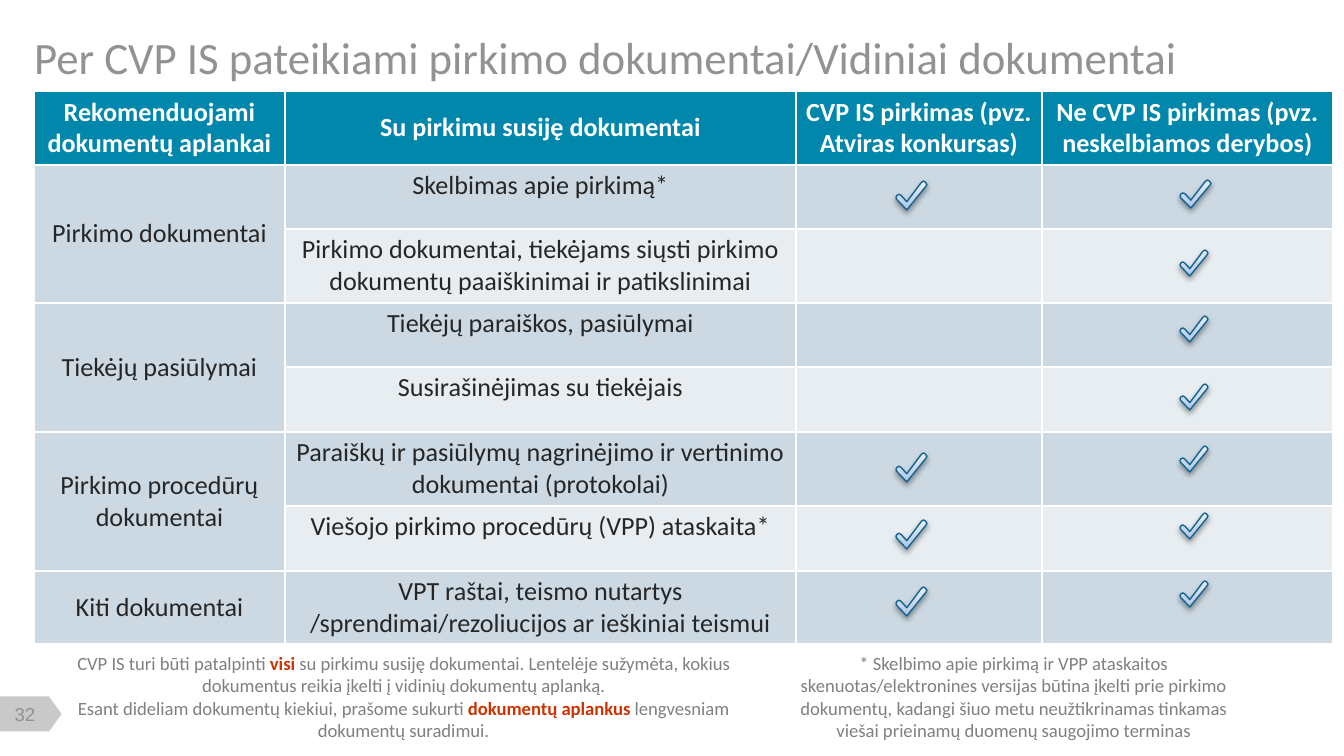
from copy import deepcopy

from lxml.etree import SubElement
from pptx import Presentation
from pptx.dml.color import RGBColor
from pptx.enum.shapes import MSO_SHAPE
from pptx.enum.text import MSO_ANCHOR as Anchor, MSO_AUTO_SIZE as AutoSize, PP_ALIGN as Align
from pptx.oxml.ns import qn
from pptx.util import Emu, Pt

WHITE = RGBColor(0xFF, 0xFF, 0xFF)
TITLE_GRAY = RGBColor(0x92, 0x92, 0x92)
NOTE_GRAY = RGBColor(0x80, 0x80, 0x80)
TAG_GRAY = RGBColor(0xC9, 0xC9, 0xC9)
INK = RGBColor(0x26, 0x26, 0x26)
RED = RGBColor(0xCC, 0x33, 0x00)
TEAL = RGBColor(0x01, 0x87, 0xAC)
BAND_DARK = RGBColor(0xCC, 0xD9, 0xE3)
BAND_LIGHT = RGBColor(0xE7, 0xED, 0xF1)
CHECK_LINE = RGBColor(0x14, 0x63, 0x90)
CHECK_STOPS = [
    (0, RGBColor(0xA9, 0xC3, 0xE5)),
    (0.35, RGBColor(0xC3, 0xD5, 0xEC)),
    (1, RGBColor(0xE8, 0xEF, 0xF8)),
]
CHECK_OUTLINE = [(95, 4), (89, 0), (82, 5), (35, 72), (17, 50), (10, 46), (3, 50),
                 (0, 57), (2, 63), (35, 100), (97, 18), (100, 12)]

HEADERS = ["Rekomenduojami dokumentų aplankai", "Su pirkimu susiję dokumentai",
           "CVP IS pirkimas (pvz. Atviras konkursas)",
           "Ne CVP IS pirkimas (pvz. neskelbiamos derybos)"]
FOLDERS = [
    ("Pirkimo dokumentai", [
        "Skelbimas apie pirkimą*",
        "Pirkimo dokumentai, tiekėjams siųsti pirkimo dokumentų paaiškinimai ir patikslinimai"]),
    ("Tiekėjų pasiūlymai", [
        "Tiekėjų paraiškos, pasiūlymai",
        "Susirašinėjimas su tiekėjais"]),
    ("Pirkimo procedūrų dokumentai", [
        "Paraiškų ir pasiūlymų nagrinėjimo ir vertinimo dokumentai (protokolai)",
        "Viešojo pirkimo procedūrų (VPP) ataskaita*"]),
    ("Kiti dokumentai", [
        "VPT raštai, teismo nutartys /sprendimai/rezoliucijos ar ieškiniai teismui"]),
]
COLUMN_WIDTHS = [251, 511, 246, 291]
ROW_HEIGHTS = [74, 64, 74, 64, 65, 74, 65, 73]
CVP_CHECK_TOPS = [181, 453, 520, 587]
OTHER_CHECK_TOPS = [250, 316, 384, 446, 513, 581]
FOLDER_NOTE = [
    [("CVP IS turi būti patalpinti ", False), ("visi", True),
     (" su pirkimu susiję dokumentai. Lentelėje sužymėta, kokius dokumentus reikia "
      "įkelti į vidinių dokumentų aplanką.", False)],
    [("Esant dideliam dokumentų kiekiui, prašome sukurti ", False),
     ("dokumentų aplankus ", True), ("lengvesniam dokumentų suradimui.", False)],
]
STORAGE_NOTE = [[(
    "* Skelbimo apie pirkimą ir VPP ataskaitos skenuotas/elektronines versijas būtina "
    "įkelti prie pirkimo dokumentų, kadangi šiuo metu neužtikrinamas tinkamas viešai "
    "prieinamų duomenų saugojimo terminas", False)]]


def px(value):
    return Emu(round(value * 914400 / 134.4))


def add_text(paragraph, text, size=10, color=NOTE_GRAY, bold=False, font="Calibri",
             align=Align.CENTER, after=0):
    paragraph.alignment = align
    paragraph.space_after = Pt(after)
    run = paragraph.add_run()
    run.text = text
    run.font.name = font
    run.font.size = Pt(size)
    run.font.bold = bold
    run.font.color.rgb = color


class SlideBuilder:
    def __init__(self, presentation):
        self.slide = presentation.slides.add_slide(presentation.slide_layouts[5])
        self.shapes = self.slide.shapes

    def title(self, text, *box):
        shape = self.shapes.title
        shape.left, shape.top, shape.width, shape.height = map(px, box)
        frame = shape.text_frame
        frame.auto_size = AutoSize.NONE
        frame.vertical_anchor = Anchor.MIDDLE
        frame.margin_left = 0
        add_text(frame.paragraphs[0], text, size=24, color=TITLE_GRAY, align=Align.LEFT)

    def page_number(self, text):
        tag = self.shapes.add_shape(MSO_SHAPE.FLOWCHART_OFFPAGE_CONNECTOR,
                                    px(13), px(683), px(35), px(62))
        tag.rotation = 270
        tag.shadow.inherit = False
        tag.fill.solid()
        tag.fill.fore_color.rgb = TAG_GRAY
        tag.line.fill.background()
        frame = self.shapes.add_textbox(px(3), px(703), px(44), px(23)).text_frame
        frame.word_wrap = True
        frame.vertical_anchor = Anchor.MIDDLE
        frame.margin_left = frame.margin_right = frame.margin_top = frame.margin_bottom = 0
        add_text(frame.paragraphs[0], text, color=TITLE_GRAY, font="Arial")

    def note(self, paragraphs, *box):
        frame = self.shapes.add_textbox(*map(px, box)).text_frame
        frame.word_wrap = True
        for index, runs in enumerate(paragraphs):
            paragraph = frame.add_paragraph() if index else frame.paragraphs[0]
            for text, strong in runs:
                add_text(paragraph, text, bold=strong, color=RED if strong else NOTE_GRAY)

    def cell(self, cell, text, anchor=Anchor.MIDDLE, **text_format):
        cell.margin_left = cell.margin_right = px(9)
        cell.margin_top = cell.margin_bottom = px(5)
        cell.vertical_anchor = anchor
        add_text(cell.text_frame.paragraphs[0], text, size=14, **text_format)

    def table(self, left, top):
        table = self.shapes.add_table(len(ROW_HEIGHTS), len(COLUMN_WIDTHS), px(left), px(top),
                                      px(sum(COLUMN_WIDTHS)), px(sum(ROW_HEIGHTS))).table
        for column, width in zip(table.columns, COLUMN_WIDTHS):
            column.width = px(width)
        for row_index, height in enumerate(ROW_HEIGHTS):
            table.rows[row_index].height = px(height)
            band = BAND_DARK if row_index % 2 else BAND_LIGHT
            for column_index, cell in enumerate(table.rows[row_index].cells):
                cell.fill.solid()
                body = band if column_index else BAND_DARK
                cell.fill.fore_color.rgb = body if row_index else TEAL
        for column_index, text in enumerate(HEADERS):
            self.cell(table.cell(0, column_index), text, color=WHITE, bold=True)
        row = 1
        for folder, documents in FOLDERS:
            if len(documents) > 1:
                table.cell(row, 0).merge(table.cell(row + len(documents) - 1, 0))
            self.cell(table.cell(row, 0), folder, color=INK, after=3)
            for document in documents:
                self.cell(table.cell(row, 1), document, Anchor.TOP, color=INK, after=3)
                row += 1

    def check(self, left, top, width, height):
        start, *others = CHECK_OUTLINE
        builder = self.shapes.build_freeform(*start, scale=(px(width) / 100, px(height) / 100))
        builder.add_line_segments(others, close=True)
        shape = builder.convert_to_shape(px(left), px(top))
        shape.fill.gradient()
        shape.fill.gradient_angle = 90
        properties = shape._element.spPr
        stop_list = properties.find(".//" + qn("a:gsLst"))
        stop_list.insert(1, deepcopy(stop_list[0]))
        for stop, (position, color) in zip(shape.fill.gradient_stops, CHECK_STOPS):
            stop.position = position
            stop.color.rgb = color
        shape.line.color.rgb = CHECK_LINE
        shape.line.width = Pt(0.75)
        shape.shadow.inherit = False
        shadow = SubElement(properties.find(qn("a:effectLst")), qn("a:outerShdw"),
                            blurRad=str(Pt(3.1)), dist=str(Pt(1.6)), dir="5400000",
                            rotWithShape="0")
        color = SubElement(shadow, qn("a:srgbClr"), val="000000")
        SubElement(color, qn("a:alpha"), val="38000")


def main():
    presentation = Presentation()
    presentation.slide_width, presentation.slide_height = px(1344), px(756)
    builder = SlideBuilder(presentation)
    builder.page_number("32")
    builder.title("Per CVP IS pateikiami pirkimo dokumentai/Vidiniai dokumentai", 34, 31, 1250, 52)
    builder.table(34, 91)
    for top in CVP_CHECK_TOPS:
        builder.check(896, top, 31, 29)
    builder.check(1180, 180, 31, 28)
    for top in OTHER_CHECK_TOPS:
        builder.check(1180, top, 28, 26)
    builder.note(FOLDER_NOTE, 56, 645, 695, 103)
    builder.note(STORAGE_NOTE, 773, 645, 481, 103)
    presentation.save("out.pptx")


if __name__ == "__main__":
    main()
